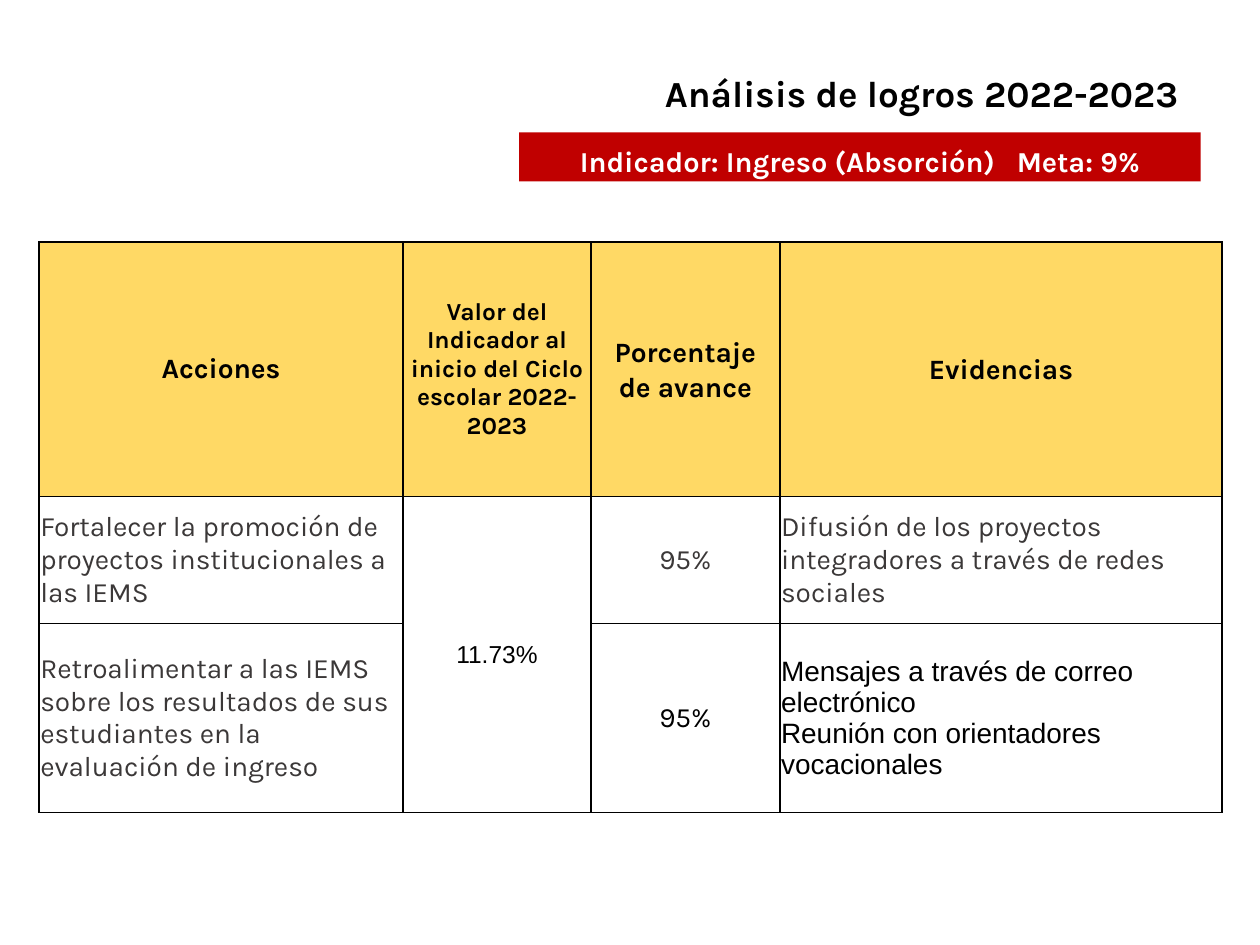
from lxml.etree import SubElement
from pptx import Presentation
from pptx.dml.color import RGBColor
from pptx.enum.shapes import MSO_SHAPE
from pptx.enum.text import MSO_ANCHOR, PP_ALIGN
from pptx.oxml.ns import qn
from pptx.util import Inches, Pt

BLACK, GRAY, WHITE = "000000", "3B3838", "FFFFFF"
GOLD, RED = "FFD965", "C00000"
COLS = [2.89, 1.49, 1.5, 3.51]
ROWS = [2.02, 1.01, 1.5]
HEADERS = [
    ("Acciones", 16, None),
    ("Valor del Indicador al inicio del Ciclo escolar 2022-2023", 14, None),
    ("Porcentaje de avance", 16, 1.07),
    ("Evidencias", 16, 1.07),
]
LEFT, CENTER = PP_ALIGN.LEFT, PP_ALIGN.CENTER
BODY = [
    [
        ("Fortalecer la promoción de proyectos institucionales a las IEMS", 16, "Karla", GRAY, LEFT),
        ("11.73%", 14, "Arial", BLACK, CENTER),
        ("95%", 16, "Karla", GRAY, CENTER),
        ("Difusión de los proyectos integradores a través de redes sociales", 16, "Karla", GRAY, LEFT),
    ],
    [
        ("Retroalimentar a las IEMS sobre los resultados de sus estudiantes en la evaluación de ingreso",
         16, "Karla", GRAY, LEFT),
        None,
        ("95%", 16, "Karla", BLACK, CENTER),
        ("Mensajes a través de correo electrónico\nReunión con orientadores vocacionales",
         16, "Arial", BLACK, LEFT),
    ],
]


def rgb(value):
    return RGBColor.from_string(value)


def set_text(tf, text, size, font="Karla", color=BLACK, align=CENTER, bold=False, spacing=None):
    tf.text = text
    tf.word_wrap = True
    for p in tf.paragraphs:
        p.alignment = align
        p.font.size = Pt(size)
        p.font.name = font
        p.font.bold = bold
        p.font.color.rgb = rgb(color)
        if spacing:
            p.line_spacing = spacing


def set_fill(shape, color):
    shape.fill.solid()
    shape.fill.fore_color.rgb = rgb(color)


def add_borders(cell):
    tc_pr = cell._tc.get_or_add_tcPr()
    for tag in ("a:lnL", "a:lnR", "a:lnT", "a:lnB"):
        ln = SubElement(tc_pr, qn(tag), w=str(Pt(1)))
        fill = SubElement(ln, qn("a:solidFill"))
        SubElement(fill, qn("a:srgbClr"), val=BLACK)


def format_cell(cell, fill, inset):
    add_borders(cell)
    set_fill(cell, fill)
    cell.vertical_anchor = MSO_ANCHOR.MIDDLE
    cell.margin_left = cell.margin_right = Inches(inset)
    cell.margin_top = cell.margin_bottom = 0


def add_title(s):
    title = s.shapes.title
    title.left, title.top = Inches(5), Inches(0.57)
    title.width, title.height = Inches(4.63), Inches(0.37)
    set_fill(title, WHITE)
    title.text_frame.vertical_anchor = MSO_ANCHOR.MIDDLE
    set_text(title.text_frame, "Análisis de logros 2022-2023", 21, bold=True, spacing=0.9)


def add_achievements(s):
    table = s.shapes.add_table(len(ROWS), len(COLS), Inches(0.31), Inches(1.92),
                               Inches(sum(COLS)), Inches(sum(ROWS))).table
    for column, width in zip(table.columns, COLS):
        column.width = Inches(width)
    for row, height in zip(table.rows, ROWS):
        row.height = Inches(height)
    for c, (text, size, spacing) in enumerate(HEADERS):
        cell = table.cell(0, c)
        format_cell(cell, GOLD, 0.06)
        set_text(cell.text_frame, text, size, bold=True, spacing=spacing)
    for r, row in enumerate(BODY, 1):
        for c, content in enumerate(row):
            cell = table.cell(r, c)
            format_cell(cell, WHITE, 0.01)
            if content:
                set_text(cell.text_frame, *content)
    table.cell(1, 1).merge(table.cell(2, 1))


def add_indicator(s):
    banner = s.shapes.add_shape(MSO_SHAPE.RECTANGLE, Inches(4.12), Inches(1.05),
                                Inches(5.41), Inches(0.39))
    banner.shadow.inherit = False
    set_fill(banner, RED)
    banner.line.fill.background()
    banner.text_frame.vertical_anchor = MSO_ANCHOR.TOP
    set_text(banner.text_frame, "Indicador: Ingreso (Absorción)   Meta: 9%", 16.5,
             color=WHITE, bold=True, spacing=1.15)


def main():
    prs = Presentation()
    prs.slide_width, prs.slide_height = Inches(10), Inches(7.5)
    s = prs.slides.add_slide(prs.slide_layouts[5])
    add_title(s)
    add_achievements(s)
    add_indicator(s)
    prs.save("out.pptx")


if __name__ == "__main__":
    main()
